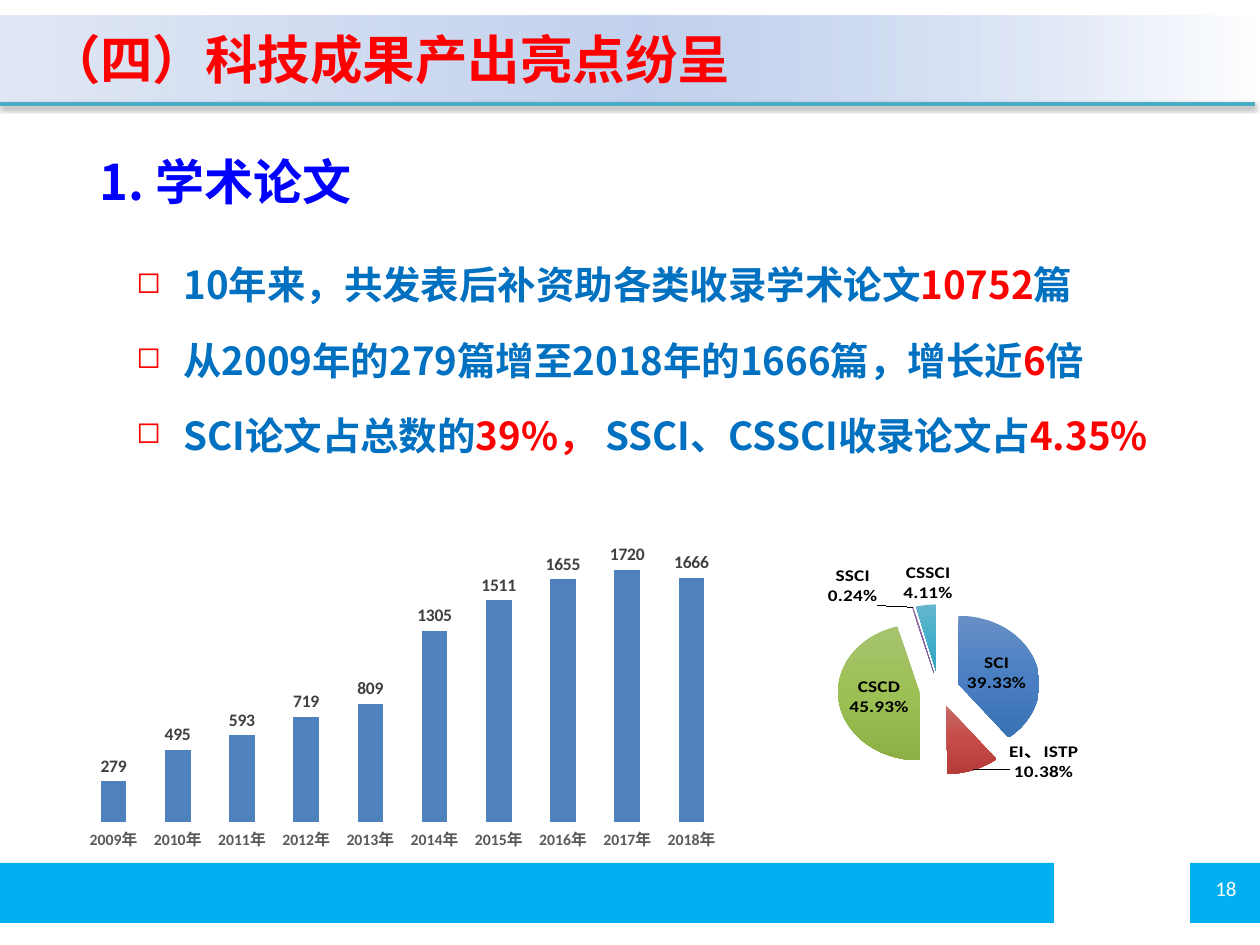
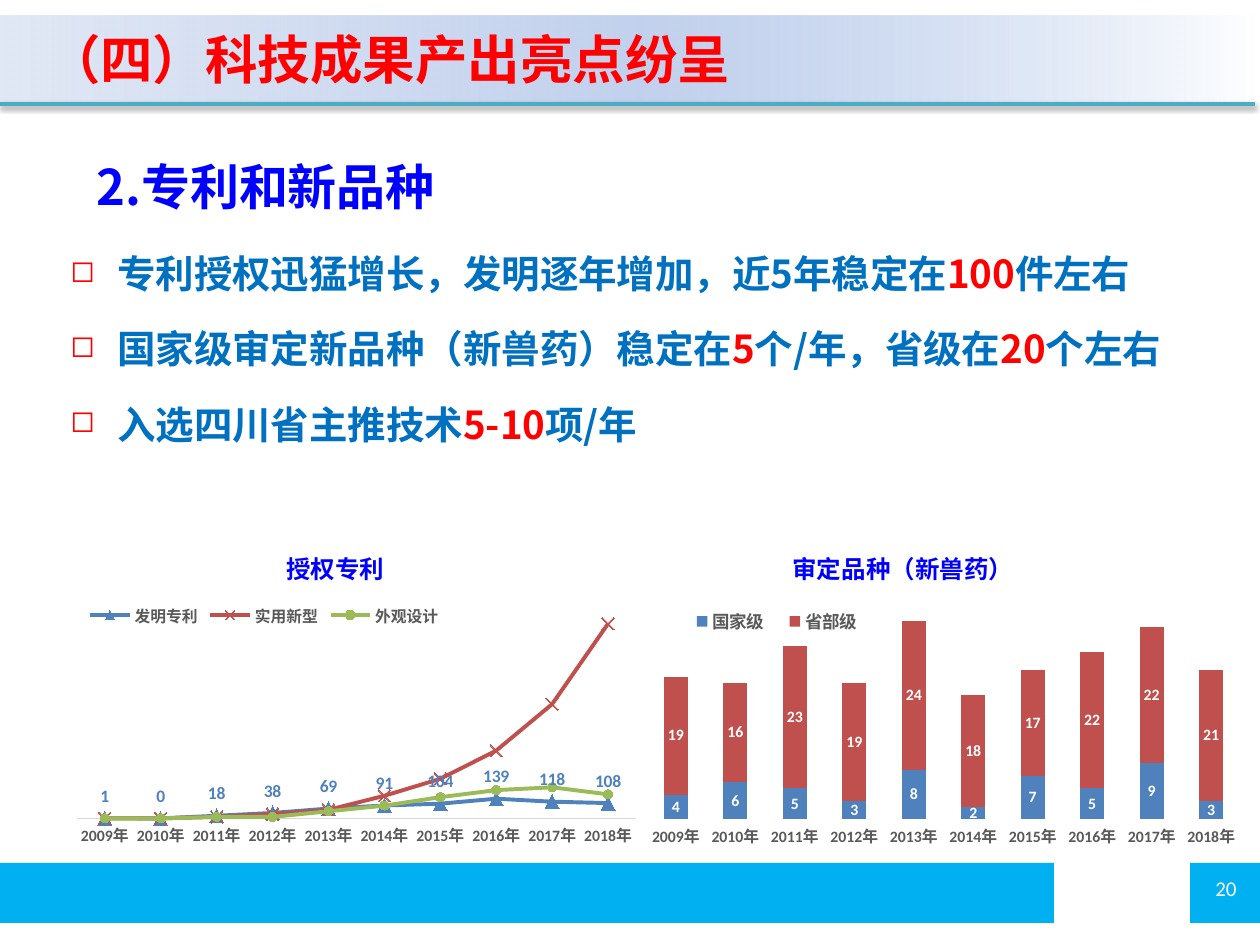
from lxml.etree import SubElement
from pptx import Presentation
from pptx.chart.data import CategoryChartData
from pptx.dml.color import RGBColor
from pptx.enum.chart import XL_CHART_TYPE as ChartType
from pptx.enum.chart import XL_LABEL_POSITION as LabelPosition
from pptx.enum.chart import XL_LEGEND_POSITION as LegendPosition
from pptx.enum.chart import XL_MARKER_STYLE as Marker
from pptx.enum.chart import XL_TICK_MARK as TickMark
from pptx.enum.shapes import MSO_CONNECTOR, MSO_SHAPE
from pptx.enum.text import MSO_ANCHOR, PP_ALIGN as Align
from pptx.oxml import parse_xml
from pptx.oxml.ns import nsdecls, qn
from pptx.util import Pt

EMU_PER_PX = 914400 / 126
SANS, SERIF, LATIN = "Noto Sans CJK SC", "Times New Roman", "Calibri"
COLORS = {
    "footer": "00B0F0", "white": "FFFFFF", "black": "000000", "red": "FF0000",
    "heading": "0000FF", "body": "0070C0", "rule": "4BACC6",
    "axis text": "595959", "axis line": "D9D9D9", "value text": "404040",
    "blue": "4F81BD", "brick": "C0504D", "green": "9BBB59",
}
BAND_STOPS = [(0, "9AB5E4", 0), (50, "C2D1ED", 100), (100, "E1E8F5", 100)]

TITLE = "（四）科技成果产出亮点纷呈"
YEARS = [f"{year}年" for year in range(2009, 2019)]

PAPERS = {
    "number": "18",
    "heading": ("1. 学术论文", (87, 116, 354, 91)),
    "bullet box": (124, 226, 1112, 231),
    "bullets": [
        [("10年来，共发表后补资助各类收录学术论文", "body"), ("10752", "red"), ("篇", "body")],
        [("从2009年的279篇增至2018年的1666篇，增长近", "body"), ("6", "red"), ("倍", "body")],
        [("SCI论文占总数的", "body"), ("39%， ", "red"),
         ("SSCI、CSSCI收录论文占", "body"), ("4.35%", "red")],
    ],
}
PATENTS = {
    "number": "20",
    "heading": ("2.专利和新品种", (84, 121, 433, 102)),
    "bullet box": (58, 215, 1158, 241),
    "bullets": [
        [("专利授权迅猛增长，发明逐年增加，近5年稳定在", "body"), ("100", "red"), ("件左右", "body")],
        [("国家级审定新品种（新兽药）稳定在", "body"), ("5", "red"),
         ("个/年，省级在", "body"), ("20", "red"), ("个左右", "body")],
        [("入选四川省主推技术", "body"), ("5-10", "red"), ("项/年", "body")],
    ],
}
CHART_TITLES = [("授权专利", (273, 533, 125, 52)), ("审定品种（新兽药）", (779, 533, 248, 52))]

INDEX_SHARES = [
    ("SCI", 39.33, ("688FC5", "4A80C3", "3B72B3"), "ctr", (0, 0)),
    ("EI、ISTP", 10.38, ("C76967", "C64B47", "B63C39"), "outEnd", (0.06, -0.1)),
    ("CSCD", 45.93, ("A6C36F", "9DC054", "8DB045"), "ctr", (0, 0)),
    ("SSCI", 0.24, ("8E78AC", "8061A5", "715396"), "outEnd", (-0.06, 0.02)),
    ("CSSCI", 4.11, ("66B5CD", "45B0CC", "36A0BC"), "outEnd", (0.05, 0.02)),
]
PAPERS_BY_YEAR = [("论文", [279, 495, 593, 719, 809, 1305, 1511, 1655, 1720, 1666])]
VARIETIES = [
    ("国家级", [4, 6, 5, 3, 8, 2, 7, 5, 9, 3]),
    ("省部级", [19, 16, 23, 19, 24, 18, 17, 22, 22, 21]),
]
PATENT_KINDS = [
    ("发明专利", [1, 0, 18, 38, 69, 91, 104, 139, 118, 108]),
    ("实用新型", [0, 0, 10, 30, 60, 160, 280, 480, 810, 1380]),
    ("外观设计", [0, 0, 10, 10, 50, 90, 150, 200, 220, 170]),
]
PATENT_STYLES = [("blue", Marker.TRIANGLE, 8), ("brick", Marker.X, 7), ("green", Marker.CIRCLE, 5)]


def px(*lengths):
    return [round(length * EMU_PER_PX) for length in lengths]


def rgb(name):
    return RGBColor.from_string(COLORS[name])


def set_font(font, size, color, bold=False, name=LATIN):
    font.size, font.bold, font.name = Pt(size), bold, name
    font.color.rgb = rgb(color)


def style_paragraph(paragraph, size, color, bold, name, align=Align.LEFT):
    paragraph.alignment = align
    set_font(paragraph.font, size, color, bold, name)
    defaults = paragraph._p.pPr.find(qn("a:defRPr"))
    SubElement(defaults, qn("a:ea"), typeface=SANS)


def set_gradient(fill, stops, angle):
    fill.gradient()
    fill.gradient_angle = angle
    stop_list = fill._fill._gradFill.find(qn("a:gsLst"))
    for stop in list(stop_list):
        stop_list.remove(stop)
    for position, color, opacity in stops:
        stop = SubElement(stop_list, qn("a:gs"), pos=str(position * 1000))
        shade = SubElement(stop, qn("a:srgbClr"), val=color)
        SubElement(shade, qn("a:alpha"), val=str(opacity * 1000))


def add_box(slide, box):
    shape = slide.shapes.add_shape(MSO_SHAPE.RECTANGLE, *px(*box))
    shape.shadow.inherit = False
    shape.line.fill.background()
    return shape


def add_text(slide, text, box, size, color, bold=True, name=SANS,
             align=Align.LEFT, wrap=True):
    frame = slide.shapes.add_textbox(*px(*box)).text_frame
    frame.word_wrap = wrap
    paragraph = frame.paragraphs[0]
    paragraph.text = text
    style_paragraph(paragraph, size, color, bold, name, align)
    return paragraph


def set_hanging(paragraph, indent):
    properties = paragraph._p.get_or_add_pPr()
    margin = px(indent)[0]
    properties.set("marL", str(margin))
    properties.set("indent", str(-margin))
    return properties


def add_bullets(slide, bullets, box):
    frame = slide.shapes.add_textbox(*px(*box)).text_frame
    frame.word_wrap = True
    for index, parts in enumerate(bullets):
        paragraph = frame.add_paragraph() if index else frame.paragraphs[0]
        paragraph.line_spacing = Pt(43)
        properties = set_hanging(paragraph, 47)
        bullet_color = SubElement(properties, qn("a:buClr"))
        SubElement(bullet_color, qn("a:srgbClr"), val=COLORS["red"])
        SubElement(properties, qn("a:buSzPct"), val="78000")
        SubElement(properties, qn("a:buChar"), char="◻")
        style_paragraph(paragraph, 22, "body", True, SANS, Align.JUSTIFY)
        for text, color in parts:
            run = paragraph.add_run()
            run.text = text
            run.font.color.rgb = rgb(color)


def add_title_band(slide):
    band = add_box(slide, (0, 16, 1255, 86))
    set_gradient(band.fill, BAND_STOPS, 180)
    frame = band.text_frame
    frame.margin_left = px(48)[0]
    frame.vertical_anchor = MSO_ANCHOR.MIDDLE
    frame.text = TITLE
    style_paragraph(frame.paragraphs[0], 30, "red", True, SANS)
    rule = slide.shapes.add_connector(MSO_CONNECTOR.STRAIGHT, *px(0, 104, 1255, 104))
    rule.line.color.rgb = rgb("rule")
    rule.line.width = Pt(2)
    effects = SubElement(rule._element.spPr, qn("a:effectLst"))
    shadow = SubElement(effects, qn("a:outerShdw"), blurRad=str(Pt(3.1)),
                        dist=str(Pt(1.6)), dir="5400000", rotWithShape="0")
    shade = SubElement(shadow, qn("a:srgbClr"), val=COLORS["black"])
    SubElement(shade, qn("a:alpha"), val="38000")


def start_slide(presentation, content):
    slide = presentation.slides.add_slide(presentation.slide_layouts[6])
    for left, width in ((0, 1054), (1190, 70)):
        bar = add_box(slide, (left, 863, width, 60))
        bar.fill.solid()
        bar.fill.fore_color.rgb = rgb("footer")
    add_text(slide, content["number"], (1203, 869, 50, 38), 12, "white", False, LATIN, wrap=False)
    text, box = content["heading"]
    heading = add_text(slide, text, box, 28, "heading", align=Align.JUSTIFY)
    heading.line_spacing = 1.5
    set_hanging(heading, 66)
    add_bullets(slide, content["bullets"], content["bullet box"])
    add_title_band(slide)
    return slide


def layout_xml(**values):
    parts = "".join(f'<c:{key} val="{value}"/>' for key, value in values.items())
    return f'<c:layout {nsdecls("c")}><c:manualLayout>{parts}</c:manualLayout></c:layout>'


def edge_layout(x, y, w, h, **target):
    return parse_xml(layout_xml(**target, xMode="edge", yMode="edge", x=x, y=y, w=w, h=h))


def add_chart(slide, kind, box, categories, series, plot_box):
    data = CategoryChartData()
    data.categories = categories
    for name, values in series:
        data.add_series(name, values)
    chart = slide.shapes.add_chart(kind, *px(*box), data).chart
    chart.has_title = chart.has_legend = False
    set_font(chart.font, 10, "black")
    space = chart._chartSpace
    space.chart.addnext(parse_xml(f'<c:spPr {nsdecls("c", "a")}><a:noFill/></c:spPr>'))
    plot_area = space.chart.plotArea
    for layout in plot_area.findall(qn("c:layout")):
        plot_area.remove(layout)
    plot_area.insert(0, edge_layout(*plot_box, layoutTarget="inner"))
    return chart


def style_axes(chart, maximum, line=None):
    values, years = chart.value_axis, chart.category_axis
    values.visible = values.has_major_gridlines = False
    values.minimum_scale, values.maximum_scale = 0, maximum
    years.major_tick_mark = years.minor_tick_mark = TickMark.NONE
    set_font(years.tick_labels.font, 9, "axis text", True)
    if line:
        years.format.line.color.rgb = rgb(line)
        years.format.line.width = Pt(0.75)
    else:
        years.format.line.fill.background()


def show_values(series, size, color, position=None):
    labels = series.data_labels
    labels.show_value = True
    set_font(labels.font, size, color, True)
    if position is not None:
        labels.position = position


def add_legend(chart, size, box):
    chart.has_legend = True
    legend = chart.legend
    legend.position = LegendPosition.BOTTOM
    legend.include_in_layout = False
    set_font(legend.font, size, "axis text", True)
    element = legend._element
    for layout in element.findall(qn("c:layout")):
        element.remove(layout)
    element.find(qn("c:legendPos")).addnext(edge_layout(*box))


def add_columns(slide, kind, box, series, plot_box, maximum, label_size, label_color):
    chart = add_chart(slide, kind, box, YEARS, series, plot_box)
    style_axes(chart, maximum)
    chart.plots[0].gap_width = 150
    chart.plots[0].vary_by_categories = False
    for column, color in zip(chart.plots[0].series, ("blue", "brick")):
        column.format.fill.solid()
        column.format.fill.fore_color.rgb = rgb(color)
        show_values(column, label_size, label_color)
    return chart


def share_label(index, position, x, y):
    return parse_xml(
        f'<c:dLbl {nsdecls("c", "a")}><c:idx val="{index}"/>{layout_xml(x=x, y=y)}'
        '<c:numFmt formatCode="0.00%" sourceLinked="0"/><c:spPr><a:noFill/></c:spPr>'
        '<c:txPr><a:bodyPr/><a:p><a:pPr><a:defRPr sz="1100" b="1"/></a:pPr></a:p></c:txPr>'
        f'<c:dLblPos val="{position}"/><c:showLegendKey val="0"/><c:showVal val="0"/>'
        '<c:showCatName val="1"/><c:showSerName val="0"/><c:showPercent val="1"/>'
        '<c:showBubbleSize val="0"/><c:separator>\n</c:separator></c:dLbl>')


def add_share_pie(slide):
    names, shares = [row[0] for row in INDEX_SHARES], [row[1] for row in INDEX_SHARES]
    chart = add_chart(slide, ChartType.PIE, (660, 559, 553, 260), names,
                      [("占比", shares)], (0.08, 0.19, 0.85, 0.78))
    chart.plots[0].vary_by_categories = True
    pie = chart.plots[0].series[0]
    labels = pie.data_labels
    labels.show_value, labels.show_category_name, labels.show_percentage = False, True, True
    labels.number_format, labels.number_format_is_linked = "0.00%", False
    set_font(labels.font, 11, "black", True)
    for index, (_, _, shades, position, offset) in enumerate(INDEX_SHARES):
        stops = [(place, shade, 100) for place, shade in zip((0, 50, 100), shades)]
        set_gradient(pie.points[index].format.fill, stops, 270)
        labels._element.insert(index, share_label(index, position, *offset))
    pie._element.find(qn("c:dPt")).addprevious(
        parse_xml(f'<c:explosion {nsdecls("c")} val="25"/>'))


def add_patent_lines(slide):
    chart = add_chart(slide, ChartType.LINE_MARKERS, (59, 572, 595, 297), YEARS,
                      PATENT_KINDS, (0.03, 0.07, 0.94, 0.76))
    style_axes(chart, 1600, "axis line")
    add_legend(chart, 9, (0.04, 0.1, 0.61, 0.09))
    for line, (color, marker, size) in zip(chart.plots[0].series, PATENT_STYLES):
        line.smooth = False
        line.format.line.color.rgb = rgb(color)
        line.format.line.width = Pt(2.25)
        line.marker.style, line.marker.size = marker, size
        line.marker.format.fill.solid()
        line.marker.format.fill.fore_color.rgb = rgb(color)
        line.marker.format.line.color.rgb = rgb(color)
    show_values(chart.plots[0].series[0], 10, "blue", LabelPosition.ABOVE)


def main():
    presentation = Presentation()
    presentation.slide_width, presentation.slide_height = px(1260, 945)

    slide = start_slide(presentation, PAPERS)
    add_share_pie(slide)
    add_columns(slide, ChartType.COLUMN_CLUSTERED, (68, 522, 669, 334), PAPERS_BY_YEAR,
                (0.02, 0.02, 0.96, 0.88), 2000, 10, "value text")

    slide = start_slide(presentation, PATENTS)
    for text, box in CHART_TITLES:
        add_text(slide, text, box, 14, "heading", name=SERIF, align=Align.CENTER,
                 wrap=False).line_spacing = 1.5
    varieties = add_columns(slide, ChartType.COLUMN_STACKED, (634, 583, 607, 275), VARIETIES,
                            (0.02, 0.07, 0.98, 0.79), 35, 9, "white")
    varieties.plots[0].overlap = 100
    add_legend(varieties, 10, (0.07, 0.09, 0.33, 0.1))
    add_patent_lines(slide)
    presentation.save("out.pptx")


if __name__ == "__main__":
    main()
